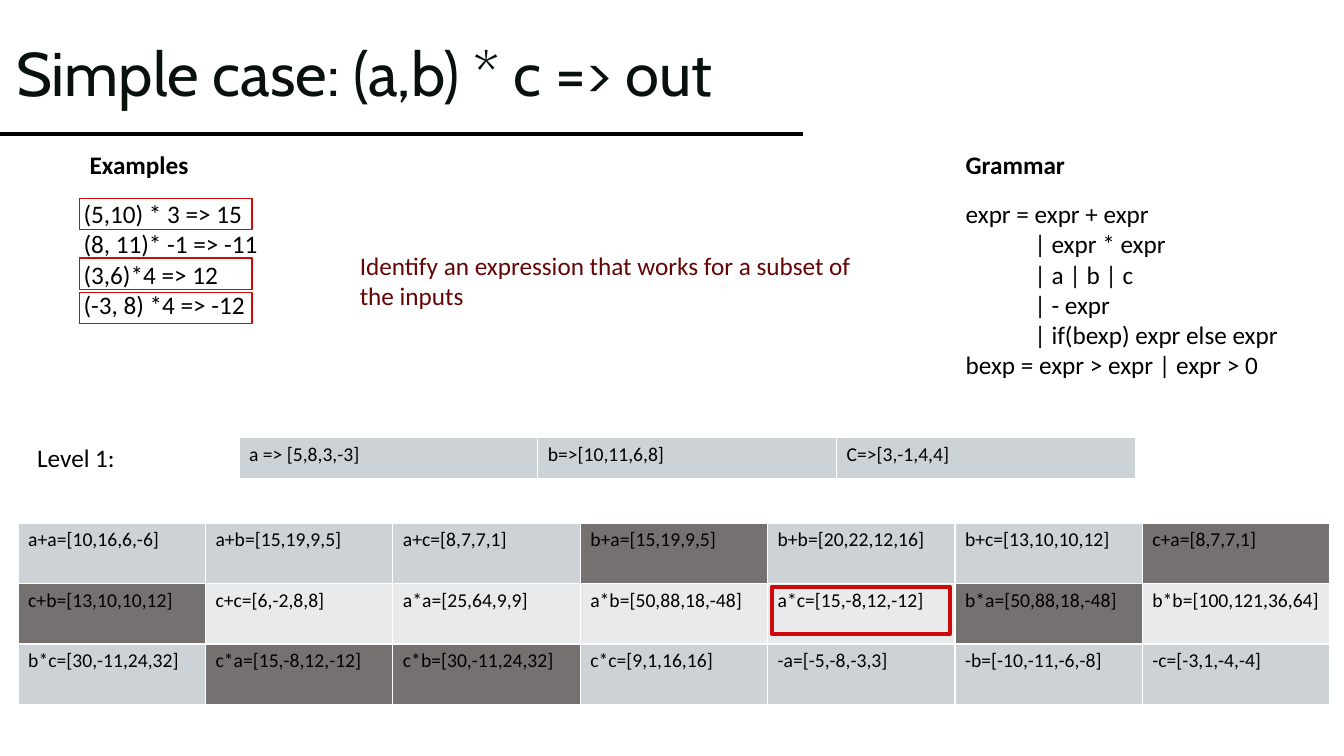
from dataclasses import dataclass

from lxml import etree
from pptx import Presentation
from pptx.dml.color import RGBColor
from pptx.enum.shapes import MSO_CONNECTOR, MSO_SHAPE
from pptx.enum.text import MSO_ANCHOR, MSO_AUTO_SIZE
from pptx.oxml.ns import qn
from pptx.util import Inches, Pt

STRAIGHT = MSO_CONNECTOR.STRAIGHT
RECTANGLE = MSO_SHAPE.RECTANGLE
MIDDLE = MSO_ANCHOR.MIDDLE
GROW = MSO_AUTO_SIZE.SHAPE_TO_FIT_TEXT

COLORS = {
    "title": "08110B",
    "text": "000000",
    "hint": "660505",
    "mark": "CD0909",
    "border": "FFFFFF",
    "odd_row": "CCD2D5",
    "even_row": "E8EAEB",
    "pruned": "767171",
}
BODY_FONT = "Calibri"
TITLE_FONT = "Cabin"
GRAMMAR_INDENT = Inches(0.68)


@dataclass
class Note:
    left: float
    top: float
    width: float
    height: float
    lines: list[str]
    color: str = "text"
    bold: bool = False


@dataclass
class Mark:
    left: float
    top: float
    width: float
    height: float
    weight: float


@dataclass
class Grid:
    left: float
    top: float
    width: float
    row_height: float
    rows: list[list[str]]


NOTES = [
    Note(9.48, 1.92, 3.34, 2.22, [
        "expr = expr + expr",
        "| expr * expr",
        "| a | b | c",
        "| - expr",
        "| if(bexp) expr else expr",
        "bexp = expr > expr | expr > 0",
    ]),
    Note(0.73, 1.92, 1.95, 1.31, [
        "(5,10) * 3 => 15",
        "(8, 11)* -1 => -11",
        "(3,6)*4 => 12",
        "(-3, 8) *4 => -12",
    ]),
    Note(9.48, 1.43, 1.2, 0.4, ["Grammar"], bold=True),
    Note(0.79, 1.43, 1.19, 0.4, ["Examples"], bold=True),
    Note(0.27, 4.34, 1.04, 0.4, ["Level 1:"]),
    Note(3.47, 2.43, 5.18, 0.71,
         ["Identify an expression that works for a subset of \vthe inputs"], "hint"),
]

GRIDS = [
    Grid(0.18, 5.19, 13.01, 0.6, [
        ["a+a=[10,16,6,-6]", "a+b=[15,19,9,5]", "a+c=[8,7,7,1]", "b+a=[15,19,9,5]",
         "b+b=[20,22,12,16]", "b+c=[13,10,10,12]", "c+a=[8,7,7,1]"],
        ["c+b=[13,10,10,12]", "c+c=[6,-2,8,8]", "a*a=[25,64,9,9]", "a*b=[50,88,18,-48]",
         "a*c=[15,-8,12,-12]", "b*a=[50,88,18,-48]", "b*b=[100,121,36,64]"],
        ["b*c=[30,-11,24,32]", "c*a=[15,-8,12,-12]", "c*b=[30,-11,24,32]",
         "c*c=[9,1,16,16]", "-a=[-5,-8,-3,3]", "-b=[-10,-11,-6,-8]", "-c=[-3,1,-4,-4]"],
    ]),
    Grid(2.37, 4.34, 8.89, 0.41, [["a => [5,8,3,-3]", "b=>[10,11,6,8]", "C=>[3,-1,4,4]"]]),
]

# Three matched examples, then the expression that covers them
MARKS = [Mark(0.79, top, 1.71, 0.31, 0.85) for top in (1.97, 2.56, 2.9)]
MARKS.append(Mark(7.66, 5.82, 1.76, 0.47, 3))


def rgb(name: str) -> RGBColor:
    return RGBColor.from_string(COLORS[name])


def set_font(para, size: float, color: str = "text", name: str = BODY_FONT,
             bold: bool = False) -> None:
    para.font.name = name
    para.font.size = Pt(size)
    para.font.bold = bold
    para.font.color.rgb = rgb(color)


def add_title(page, text: str) -> None:
    title = page.shapes.title
    title.left, title.top = Inches(0.06), Inches(0.03)
    title.width, title.height = Inches(7.51), Inches(1.45)
    frame = title.text_frame
    frame.text = text
    frame.word_wrap = True
    frame.auto_size = MSO_AUTO_SIZE.NONE
    frame.vertical_anchor = MIDDLE
    para = frame.paragraphs[0]
    para.alignment = 1
    para.line_spacing = 0.9
    set_font(para, 44, "title", TITLE_FONT)


def add_rule(page) -> None:
    rule = page.shapes.add_connector(STRAIGHT, 0, Inches(1.33), Inches(7.96), Inches(1.33))
    rule.line.color.rgb = rgb("text")
    rule.line.width = Pt(2.25)
    etree.SubElement(rule._element.spPr, qn("a:effectLst"))


def add_note(page, note: Note) -> None:
    box = page.shapes.add_textbox(Inches(note.left), Inches(note.top),
                                  Inches(note.width), Inches(note.height))
    frame = box.text_frame
    frame.text = "\n".join(note.lines).replace("\v", "\v")
    frame.word_wrap = False
    frame.auto_size = GROW
    for para in frame.paragraphs:
        set_font(para, 18, note.color, bold=note.bold)
        if para.text.startswith("|"):
            para._p.get_or_add_pPr().set("marL", str(GRAMMAR_INDENT))


def add_borders(cell) -> None:
    properties = cell._tc.get_or_add_tcPr()
    for side in ("lnL", "lnR", "lnT", "lnB"):
        line = etree.SubElement(properties, qn(f"a:{side}"), w=str(Pt(1)))
        fill = etree.SubElement(line, qn("a:solidFill"))
        etree.SubElement(fill, qn("a:srgbClr"), val=COLORS["border"])


def add_grid(page, grid: Grid) -> None:
    row_count, column_count = len(grid.rows), len(grid.rows[0])
    table = page.shapes.add_table(
        row_count, column_count, Inches(grid.left), Inches(grid.top),
        Inches(grid.width), Inches(grid.row_height * row_count)).table
    table.first_row = False
    seen_values = set()
    for row, texts in enumerate(grid.rows):
        for column, text in enumerate(texts):
            cell = table.cell(row, column)
            cell.text = text
            set_font(cell.text_frame.paragraphs[0], 14)
            add_borders(cell)
            # An expression whose values were already reached is pruned
            values = text.split("[")[1]
            band = "even_row" if row % 2 else "odd_row"
            cell.fill.solid()
            cell.fill.fore_color.rgb = rgb("pruned" if values in seen_values else band)
            seen_values.add(values)


def add_mark(page, mark: Mark) -> None:
    frame = page.shapes.add_shape(RECTANGLE, Inches(mark.left), Inches(mark.top),
                                  Inches(mark.width), Inches(mark.height))
    frame.shadow.inherit = False
    frame.fill.background()
    frame.line.color.rgb = rgb("mark")
    frame.line.width = Pt(mark.weight)


def main() -> None:
    deck = Presentation()
    deck.slide_width, deck.slide_height = Inches(13.33), Inches(7.5)
    page = deck.slides.add_slide(deck.slide_layouts[5])

    # Heading
    add_rule(page)
    add_title(page, "Simple case: (a,b) * c => out")

    # Examples, grammar and hint
    for note in NOTES:
        add_note(page, note)

    # Expressions per level
    for grid in GRIDS:
        add_grid(page, grid)

    # Red frames
    for mark in MARKS:
        add_mark(page, mark)

    deck.save("out.pptx")


if __name__ == "__main__":
    main()
